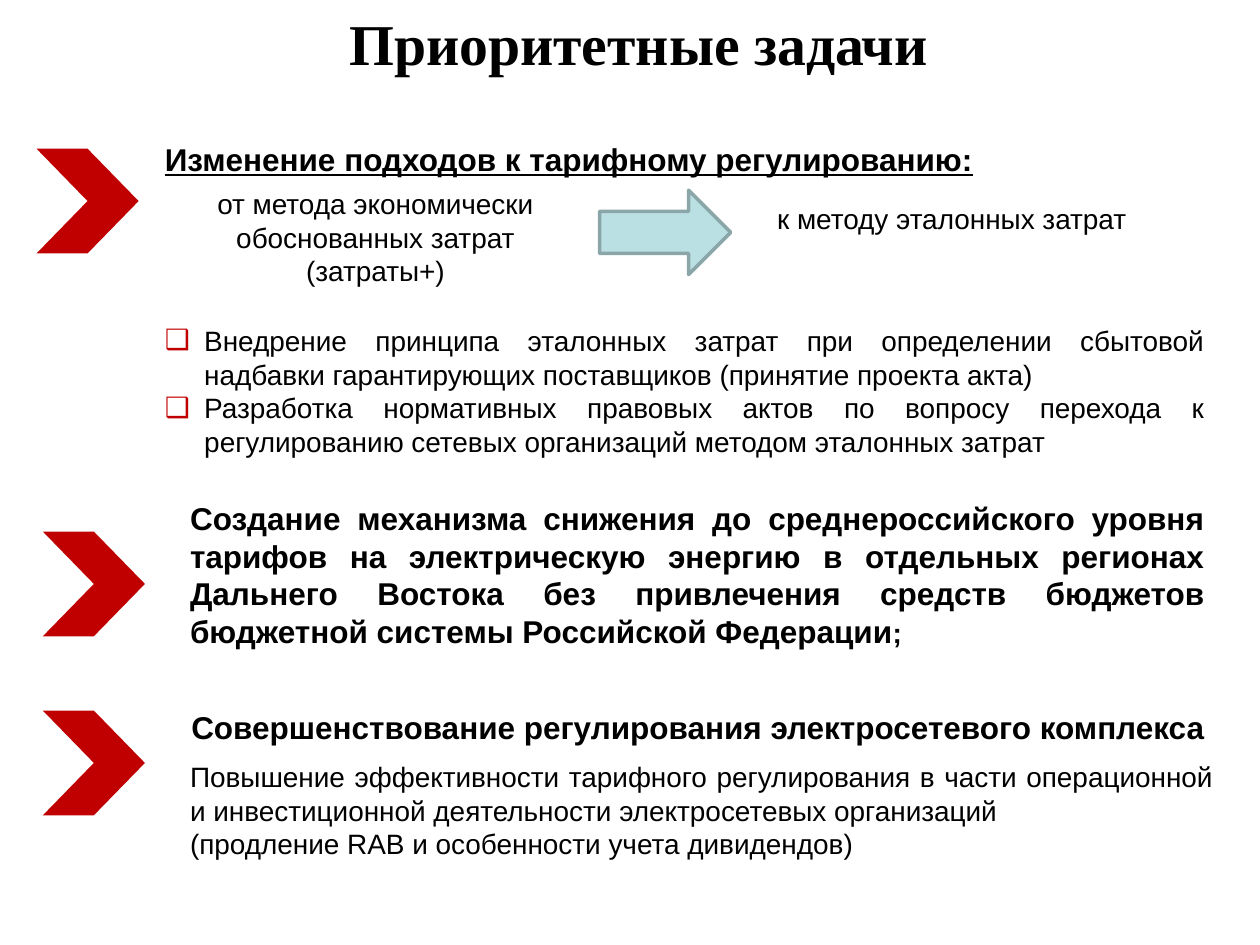
from dataclasses import dataclass, field
from typing import Any

import pptx
import pptx.dml.color
import pptx.enum.shapes
import pptx.enum.text
import pptx.oxml
import pptx.oxml.ns
import pptx.util

Pt = pptx.util.Pt
RGBColor = pptx.dml.color.RGBColor
Align = pptx.enum.text.PP_ALIGN
Anchor = pptx.enum.text.MSO_ANCHOR
Preset = pptx.enum.shapes.MSO_SHAPE

BLACK = RGBColor(0x00, 0x00, 0x00)
RED = RGBColor(0xC0, 0x00, 0x00)
PALE_BLUE = RGBColor(0xBB, 0xE0, 0xE3)
GREY_BLUE = RGBColor(0x8A, 0xA6, 0xA8)

BULLET_INDENT = 22.5
CHEVRON_SIZE = (58.3, 59.8)


@dataclass(frozen=True)
class TextBlock:
    left: float
    top: float
    width: float
    height: float
    paragraphs: tuple[str, ...]
    text_format: dict[str, Any] = field(default_factory=dict)


HEADING = {"size": 18, "bold": True}
TEXT_BLOCKS = (
    TextBlock(87.1, 76.3, 481, 28.8,
              ("Изменение подходов к тарифному регулированию:",),
              HEADING | {"underline": True, "wrap": False}),
    TextBlock(87.1, 103, 254.9, 65.5,
              ("от метода экономически обоснованных затрат (затраты+)",),
              {"align": Align.CENTER}),
    TextBlock(437, 111.6, 263.5, 26.6, ("к методу эталонных затрат",)),
    TextBlock(87.1, 181.4, 608.4, 162.7,
              ("Внедрение принципа эталонных затрат при определении сбытовой "
               "надбавки гарантирующих поставщиков (принятие проекта акта)",
               "Разработка нормативных правовых актов по вопросу перехода к "
               "регулированию сетевых организаций методом эталонных затрат"),
              {"align": Align.JUSTIFY, "bullet": "❑"}),
    TextBlock(101.5, 281.5, 594, 94.3,
              ("Создание механизма снижения до среднероссийского уровня тарифов "
               "на электрическую энергию в отдельных регионах Дальнего Востока "
               "без привлечения средств бюджетов бюджетной системы Российской "
               "Федерации",),
              HEADING | {"align": Align.JUSTIFY, "ending": ";", "ending_size": 16}),
    TextBlock(58.3, 401, 681.1, 28.8,
              ("Совершенствование регулирования электросетевого комплекса",),
              HEADING | {"align": Align.CENTER}),
    TextBlock(101.5, 430.6, 599, 65.5,
              ("Повышение эффективности тарифного регулирования в части "
               "операционной и инвестиционной деятельности электросетевых "
               "организаций",
               "(продление RAB и особенности учета дивидендов)"),
              {"align": Align.JUSTIFY}),
)
CHEVRON_CORNERS = ((20.9, 85), (24.5, 303.8), (24.5, 406.1))


def add_bullet(paragraph, symbol: str) -> None:
    properties = paragraph._p.get_or_add_pPr()
    properties.set("marL", str(Pt(BULLET_INDENT)))
    properties.set("indent", str(-Pt(BULLET_INDENT)))
    namespace = pptx.oxml.ns.nsdecls("a")
    for xml in (
        f'<a:buClr {namespace}><a:srgbClr val="{RED}"/></a:buClr>',
        f'<a:buFont {namespace} typeface="Arial"/>',
        f'<a:buChar {namespace} char="{symbol}"/>',
    ):
        properties.append(pptx.oxml.parse_xml(xml))


def write_text(frame, paragraphs: tuple[str, ...], *, size: float = 16,
               font_name: str = "Arial", bold: bool = False,
               underline: bool = False, align: Align = Align.LEFT,
               anchor: Anchor = Anchor.TOP, wrap: bool = True,
               bullet: str = "", ending: str = "", ending_size: float = 16) -> None:
    frame.word_wrap = wrap
    frame.vertical_anchor = anchor
    for index, text in enumerate(paragraphs):
        paragraph = frame.add_paragraph() if index else frame.paragraphs[0]
        paragraph.alignment = align
        if bullet:
            add_bullet(paragraph, bullet)
        for part, part_size in ((text, size), (ending, ending_size)):
            if part:
                run = paragraph.add_run()
                run.text = part
                run.font.size = Pt(part_size)
                run.font.name = font_name
                run.font.bold = bold
                run.font.underline = underline
                run.font.color.rgb = BLACK


def add_text_block(slide, block: TextBlock) -> None:
    box = slide.shapes.add_textbox(
        Pt(block.left), Pt(block.top), Pt(block.width), Pt(block.height))
    write_text(box.text_frame, block.paragraphs, **block.text_format)


def add_preset(slide, preset: Preset, left: float, top: float, width: float,
               height: float, fill: RGBColor, outline: RGBColor | None = None) -> None:
    shape = slide.shapes.add_shape(preset, Pt(left), Pt(top), Pt(width), Pt(height))
    shape.shadow.inherit = False
    shape.fill.solid()
    shape.fill.fore_color.rgb = fill
    if outline is None:
        shape.line.fill.background()
    else:
        shape.line.color.rgb = outline
        shape.line.width = Pt(2)


def main() -> None:
    presentation = pptx.Presentation()
    presentation.slide_width = Pt(720)
    presentation.slide_height = Pt(540)
    slide = presentation.slides.add_slide(presentation.slide_layouts[5])

    title = slide.shapes.title
    title.left, title.top, title.width, title.height = Pt(77), Pt(0), Pt(576), Pt(48.2)
    write_text(title.text_frame, ("Приоритетные задачи",), size=33,
               font_name="Times New Roman", bold=True, align=Align.CENTER,
               anchor=Anchor.MIDDLE)

    for left, top in CHEVRON_CORNERS:
        add_preset(slide, Preset.CHEVRON, left, top, *CHEVRON_SIZE, RED)
    add_preset(slide, Preset.RIGHT_ARROW, 342.7, 108.7, 74.9, 48.2, PALE_BLUE, GREY_BLUE)
    for block in TEXT_BLOCKS:
        add_text_block(slide, block)

    presentation.save("out.pptx")


if __name__ == "__main__":
    main()
